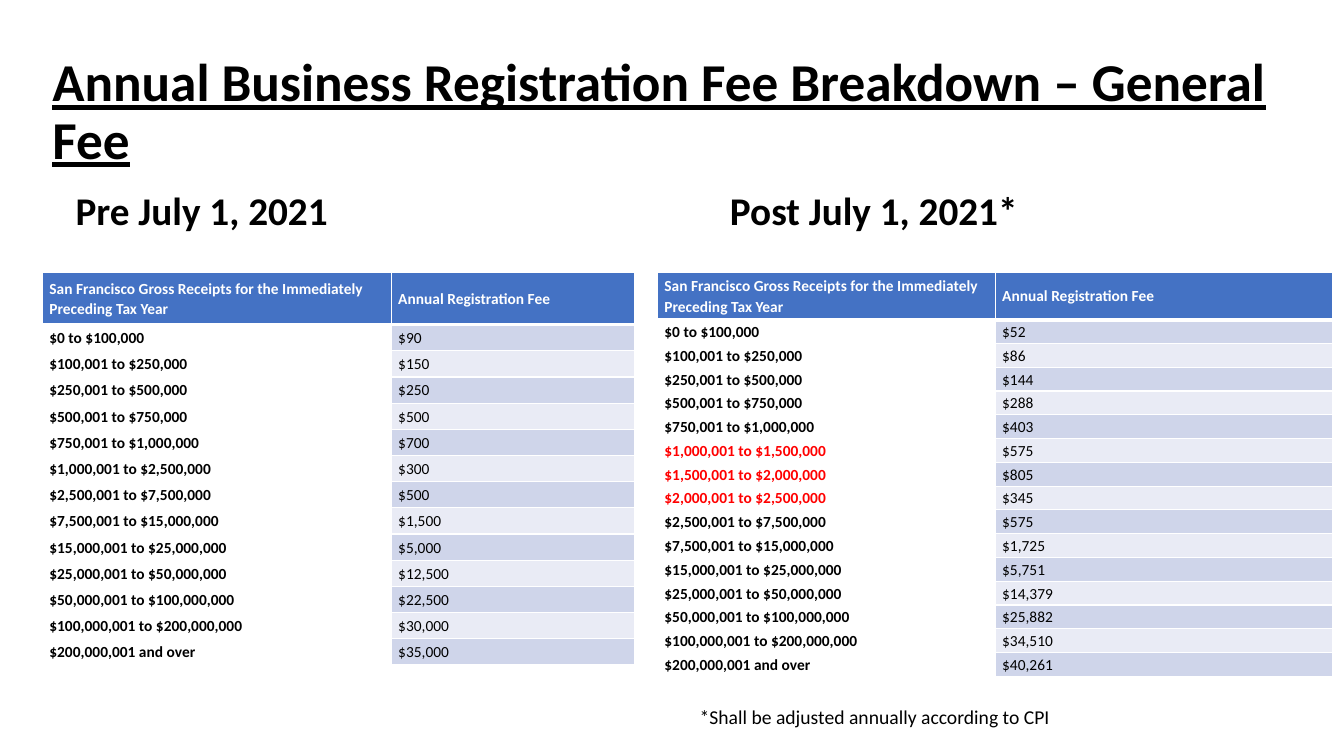
from lxml.etree import SubElement as Sub
from pptx import Presentation
from pptx.dml.color import RGBColor as RGB
from pptx.enum.text import MSO_ANCHOR as Anchor, MSO_AUTO_SIZE as Auto, PP_ALIGN as Align
from pptx.oxml.ns import qn
from pptx.util import Inches, Pt

HUES = {"white": "FFFFFF", "black": "000000", "red": "FF0000",
        "head": "4472C4", "odd": "CFD5EA", "even": "E9EBF5"}

# Receipt bands: the middle ones differ between the two tables
LOW = ["$0 to $100,000", "$100,001 to $250,000", "$250,001 to $500,000",
       "$500,001 to $750,000", "$750,001 to $1,000,000"]
OLD = ["$1,000,001 to $2,500,000"]
NEW = ["$1,000,001 to $1,500,000", "$1,500,001 to $2,000,000",
       "$2,000,001 to $2,500,000"]
HIGH = ["$2,500,001 to $7,500,000", "$7,500,001 to $15,000,000",
        "$15,000,001 to $25,000,000", "$25,000,001 to $50,000,000",
        "$50,000,001 to $100,000,000", "$100,000,001 to $200,000,000",
        "$200,000,001 and over"]
PRE = ["$90", "$150", "$250", "$500", "$700", "$300", "$500", "$1,500",
       "$5,000", "$12,500", "$22,500", "$30,000", "$35,000"]
POST = ["$52", "$86", "$144", "$288", "$403", "$575", "$805", "$345", "$575",
        "$1,725", "$5,751", "$14,379", "$25,882", "$34,510", "$40,261"]
HEAD = ("San Francisco Gross Receipts for the Immediately Preceding Tax Year",
        "Annual Registration Fee")


def apply(item, style):
    for name, value in style.items():
        setattr(item, name, value)


def write(frame, text, hue="black", para=None, **font):
    line = frame.paragraphs[0]
    apply(line, {"alignment": Align.LEFT, **(para or {})})
    run = line.add_run()
    run.text = text
    apply(run.font, {"name": "Calibri", **font})
    run.font.color.rgb = RGB.from_string(HUES[hue])


def place(shape, box):
    names = ("left", "top", "width", "height")
    apply(shape, dict(zip(names, map(Inches, box))))


def edge(cell, **widths):
    # Border lines must come before the fill in the cell properties
    props = cell._tc.get_or_add_tcPr()
    for side in "LRTB":
        line = Sub(props, qn(f"a:ln{side}"), w=str(Pt(widths.get(side, 1))))
        fill = Sub(line, qn("a:solidFill"))
        Sub(fill, qn("a:srgbClr"), val=HUES["white"])


def label(shape, box, text, anchor, para, **font):
    place(shape, box)
    apply(shape.text_frame, {"word_wrap": True, "auto_size": Auto.NONE,
                             "vertical_anchor": anchor})
    write(shape.text_frame, text, para=para, bold=True, **font)


def fees(slide, box, cols, step, rows, marked=()):
    # The header is two steps high, every fee row one step
    data = [HEAD, *rows]
    grid = slide.shapes.add_table(len(data), 2, *map(Inches, box)).table
    grid.horz_banding = False
    for col, width in zip(grid.columns, cols):
        col.width = Inches(width)
    for i, pair in enumerate(data):
        grid.rows[i].height = Inches(step if i else 2 * step)
        for j, text in enumerate(pair):
            cell = grid.cell(i, j)
            apply(cell, {"margin_left": Inches(0.07), "margin_right": Inches(0.07),
                         "margin_top": 0, "margin_bottom": 0,
                         "vertical_anchor": Anchor.MIDDLE})
            edge(cell, T=3 if i == 1 else 1, B=1 if i else 3)
            if i == 0:
                back, hue = "head", "white"
            else:
                back = ("odd" if i % 2 else "even") if j else "white"
                hue = "red" if text in marked else "black"
            cell.fill.solid()
            cell.fill.fore_color.rgb = RGB.from_string(HUES[back])
            write(cell.text_frame, text, hue, size=Pt(11), bold=i == 0 or j == 0,
                  para={"line_spacing": 1.07, "space_after": Pt(8)})


def note(slide, box, text):
    frame = slide.shapes.add_textbox(*map(Inches, box)).text_frame
    apply(frame, {"word_wrap": False, "auto_size": Auto.SHAPE_TO_FIT_TEXT})
    write(frame, text, size=Pt(14))


def compare(deck):
    slide = deck.slides.add_slide(deck.slide_layouts[4])
    parts = {p.placeholder_format.idx: p for p in slide.placeholders}
    for key in (2, 4):
        parts[key].element.getparent().remove(parts[key].element)

    # Title and headings
    label(parts[0], (0.42, 0.4, 12.82, 1.45),
          "Annual Business Registration Fee Breakdown – General Fee",
          Anchor.MIDDLE, {"line_spacing": 0.9}, size=Pt(38), underline=True)
    for key, box, text in ((1, (0.65, 1.85, 3.53, 0.85), "Pre July 1, 2021"),
                           (3, (7.14, 1.85, 3.85, 0.85), "Post July 1, 2021*")):
        label(parts[key], box, text, Anchor.TOP,
              {"line_spacing": 0.9, "space_before": Pt(10)}, size=Pt(28))

    # Fee tables and footnote
    fees(slide, (0.42, 2.7, 5.88, 3.92), (3.46, 2.41), 0.26,
         zip(LOW + OLD + HIGH, PRE))
    fees(slide, (6.52, 2.7, 6.71, 4.01), (3.35, 3.35), 0.236,
         zip(LOW + NEW + HIGH, POST), NEW)
    note(slide, (6.84, 6.94, 3.71, 0.34),
         "*Shall be adjusted annually according to CPI")


def main():
    deck = Presentation()
    apply(deck, {"slide_width": Inches(13.33), "slide_height": Inches(7.5)})
    compare(deck)
    deck.save("out.pptx")


if __name__ == "__main__":
    main()
